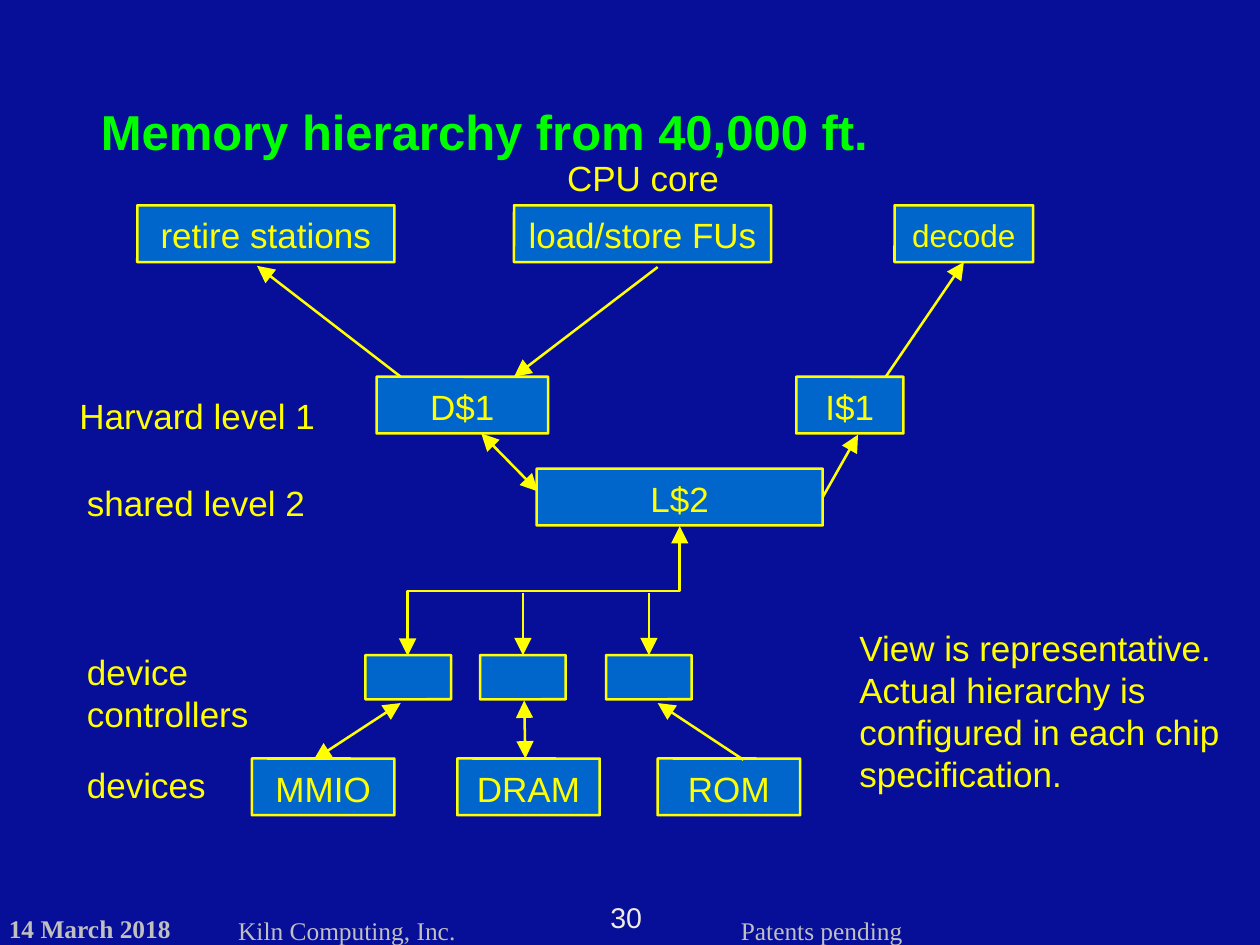
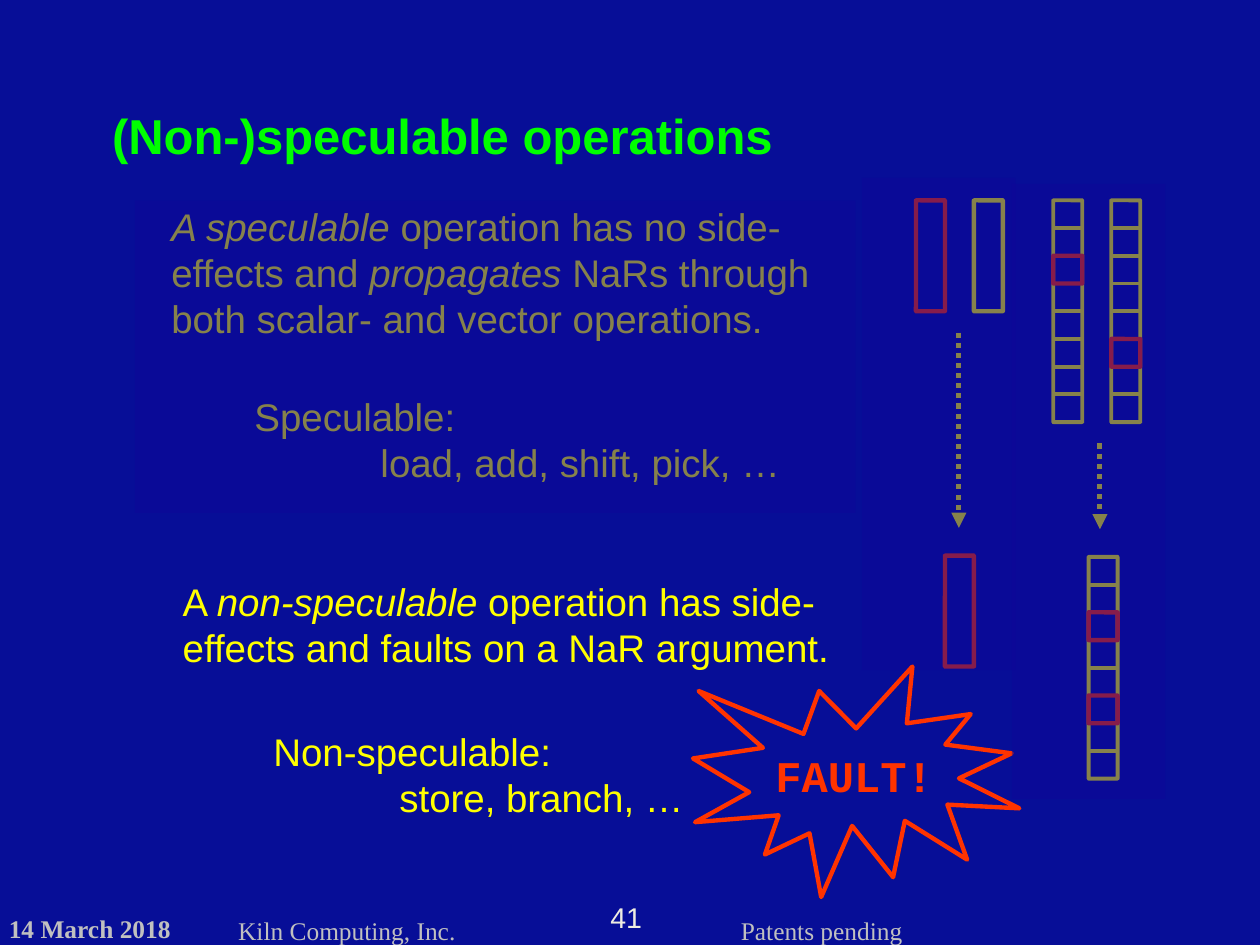
from lxml.etree import SubElement
from pptx import Presentation
from pptx.dml.color import RGBColor
from pptx.enum.dml import MSO_LINE
from pptx.enum.shapes import MSO_CONNECTOR as CXN, MSO_SHAPE as SHAPE
from pptx.enum.text import MSO_ANCHOR as ANCHOR, PP_ALIGN as ALIGN
from pptx.oxml.ns import qn
from pptx.util import Inches, Pt

rgb = RGBColor.from_string
NAVY, BLUE, VEIL = "070E97", "0066CC", "0E0797"
YELLOW, GREEN, RED = "FFFF00", "00FF00", "FF3300"
SILVER, IVORY = "C0C0C0", "EEECE1"

TIGHT = (0.01, 0.03, 0.01, 0.01)
ROOMY = (0.09, 0.04, 0.09, 0.04)
TITLE = dict(size=28, color=GREEN, bold=True)
FOOTER = dict(size=14.5, font="Times New Roman", color=SILVER, ins=(0, 0, 0, 0), wrap=False)


def put(slide, at, text="", shape=None, fill=None, line=None, width=1.45, size=20,
        font="Arial", color=YELLOW, bold=False, ins=TIGHT, wrap=True, middle=False, center=False):
    """Add a text box, or a preset shape if one is given; *stars* mark italics."""
    box = [Inches(v) for v in at]
    if shape is None:
        sp = slide.shapes.add_textbox(*box)
    else:
        sp = slide.shapes.add_shape(shape, *box)
        sp.shadow.inherit = False
        if shape == SHAPE.ROUNDED_RECTANGLE:
            sp.adjustments[0] = 0.005
        if fill:
            sp.fill.solid()
            sp.fill.fore_color.rgb = rgb(fill)
        else:
            sp.fill.background()
        if line:
            sp.line.color.rgb = rgb(line)
            sp.line.width = Pt(width)
        else:
            sp.line.fill.background()
    if not text:
        return sp

    tf = sp.text_frame
    tf.word_wrap = wrap
    tf.margin_left, tf.margin_top, tf.margin_right, tf.margin_bottom = [Inches(v) for v in ins]
    tf.vertical_anchor = ANCHOR.MIDDLE if middle else ANCHOR.TOP
    for i, content in enumerate(text.split("\n")):
        p = tf.add_paragraph() if i else tf.paragraphs[0]
        p.alignment = ALIGN.CENTER if center else ALIGN.LEFT
        if "\t" in content:
            tabs = SubElement(p._p.get_or_add_pPr(), qn("a:tabLst"))
            SubElement(tabs, qn("a:tab"), pos=str(Inches(1)), algn="l")
        for j, part in enumerate(content.split("*")):
            if part:
                r = p.add_run()
                r.text = part
                r.font.name, r.font.size = font, Pt(size)
                r.font.bold, r.font.italic = bold, j % 2 == 1
                r.font.color.rgb = rgb(color)
    return sp


def connect(slide, start, end, arrows="", width=1.45, dash=None, kind=CXN.STRAIGHT, head="lg"):
    """Join two ends, each an (x, y) point or a (shape, side) pair."""
    points = [(0, 0) if hasattr(e[0], "shape_id") else e for e in (start, end)]
    c = slide.shapes.add_connector(kind, *[Inches(v) for point in points for v in point])
    if hasattr(start[0], "shape_id"):
        c.begin_connect(*start)
    if hasattr(end[0], "shape_id"):
        c.end_connect(*end)
    c.line.color.rgb = rgb(YELLOW)
    c.line.width = Pt(width)
    if dash:
        c.line.dash_style = dash
    ln = c.line._get_or_add_ln()
    for mark, tag in (("<", "a:headEnd"), (">", "a:tailEnd")):
        if mark in arrows:
            SubElement(ln, qn(tag), type="triangle", w=head, len=head)
    SubElement(c._element.spPr, qn("a:effectLst"))
    return c


prs = Presentation()
prs.slide_width, prs.slide_height = Inches(10), Inches(7.5)
background = prs.slide_master.background.fill
background.solid()
background.fore_color.rgb = rgb(NAVY)

slides = []
for number in ("30", "41"):
    s = prs.slides.add_slide(prs.slide_layouts[6])
    put(s, (0.07, 7.25, 1.5, 0.23), "14 March 2018", **FOOTER, bold=True)
    put(s, (4.83, 7.14, 0.28, 0.26), number, size=16.3, color=IVORY,
        ins=(0, 0, 0, 0), wrap=False, center=True)
    put(s, (1.89, 7.26, 1.9, 0.23), "Kiln Computing, Inc.", **FOOTER)
    put(s, (5.88, 7.26, 1.5, 0.23), "Patents pending", **FOOTER)
    slides.append(s)
memory, speculation = slides

# Memory hierarchy
s = memory
put(s, (0.8, 0.8, 7.71, 0.45), "Memory hierarchy from 40,000 ft.", **TITLE,
    ins=(0, 0.03, 0, 0), middle=True)

blocks = {}
for name, x, y, w, size in [
    ("retire stations", 1.09, 1.63, 2.04, 20),
    ("load/store FUs", 4.08, 1.63, 2.04, 20),
    ("decode", 7.1, 1.63, 1.1, 18),
    ("D$1", 2.99, 2.99, 1.36, 20),
    ("I$1", 6.32, 2.99, 0.85, 20),
    ("L$2", 4.26, 3.72, 2.27, 20),
    ("MMIO", 2, 6.02, 1.13, 20),
    ("DRAM", 3.63, 6.02, 1.13, 20),
    ("ROM", 5.22, 6.02, 1.13, 20),
]:
    blocks[name] = put(s, (x, y, w, 0.45), name, SHAPE.ROUNDED_RECTANGLE, BLUE, YELLOW,
                       size=size, middle=True, center=True)
controllers = [put(s, (x, 5.2, 0.68, 0.35), "", SHAPE.ROUNDED_RECTANGLE, BLUE, YELLOW)
               for x in (2.9, 3.81, 4.81)]

for label, x, y, w in [
    ("CPU core", 4.49, 1.21, 1.35),
    ("Harvard level 1", 0.62, 3.1, 2.05),
    ("shared level 2", 0.68, 3.79, 1.9),
    ("devices", 0.68, 6.03, 1.1),
]:
    put(s, (x, y, w, 0.31), label, wrap=False)
put(s, (0.68, 5.13, 1.6, 0.59), "device controllers")
put(s, (6.81, 4.94, 2.95, 1.17), "View is representative. Actual hierarchy is "
    "configured in each chip specification.")

for start, end, arrows in [
    ((3.18, 2.99), (2.04, 2.11), ">"),
    ((5.22, 2.12), (4.08, 2.99), ">"),
    ((7.03, 2.99), (blocks["decode"], 2), ">"),
    ((3.82, 3.44), (4.27, 3.9), "<>"),
    ((blocks["L$2"], 3), (6.81, 3.45), ">"),
    ((controllers[1], 0), (4.15, 4.71), "<"),
    ((controllers[2], 0), (5.15, 4.71), "<"),
    ((3.18, 5.58), (2.49, 6.03), "<>"),
    ((4.16, 5.56), (4.17, 6.02), "<>"),
    ((5.9, 6.03), (5.22, 5.58), ">"),
]:
    connect(s, start, end, arrows)

# The bus leaves the cache downwards, so its elbow is turned a quarter
bus = connect(s, (blocks["L$2"], 2), (controllers[0], 0), "<>", kind=CXN.ELBOW)
bus.left, bus.top, bus.width, bus.height = [Inches(v) for v in (3.8, 3.61, 1.03, 2.16)]
xfrm = bus._element.spPr.xfrm
xfrm.flipH, xfrm.rot = False, 90

# Speculable and non-speculable operations
s = speculation
for x, y, color in [(7.27, 1.59, RED), (7.73, 1.59, YELLOW), (7.5, 4.41, RED)]:
    put(s, (x, y, 0.23, 0.88), "", SHAPE.ROUNDED_RECTANGLE, line=color, width=2.5)
for x, top, bottom in [(7.61, 2.64, 4.19), (8.73, 3.52, 4.2)]:
    connect(s, (x, top), (x, bottom), ">", 2.89, MSO_LINE.ROUND_DOT, head="med")

CELL_W, CELL_H, CELLS = 0.23, 0.22, 8
for x, y, nar_cells in [(8.82, 1.59, [5]), (8.36, 1.59, [2]), (8.64, 4.42, [2, 5])]:
    put(s, (x, y, CELL_W, CELLS * CELL_H), "", SHAPE.ROUNDED_RECTANGLE, line=YELLOW, width=2.25)
    for i in range(1, CELLS):
        connect(s, (x, y + i * CELL_H), (x + CELL_W, y + i * CELL_H), width=2.25)
    for i in nar_cells:
        put(s, (x, y + i * CELL_H, CELL_W, CELL_H), "", SHAPE.ROUNDED_RECTANGLE,
            line=RED, width=2.5)

put(s, (1.36, 1.59, 5.43, 1.05), "*A speculable* operation has no side-effects and "
    "*propagates *NaRs through both scalar- and vector operations.",
    size=22, ins=(0, 0.02, 0, 0))
put(s, (1.93, 3.08, 4.4, 0.83), "Speculable:\n\tload, add, shift, pick, …",
    size=22, ins=ROOMY, wrap=False)
put(s, (1.36, 4.55, 5.69, 0.83), "A *non-speculable* operation has side-effects and "
    "faults on a NaR argument.", size=22, ins=ROOMY)
put(s, (2.08, 5.74, 3.6, 0.83), "Non-speculable:\n\tstore, branch, …",
    size=22, ins=ROOMY, wrap=False)

veils = [put(s, (6.84, 1.41, 1.22, 3.91), "", SHAPE.RECTANGLE, VEIL)]
put(s, (5.5, 5.29, 2.59, 1.83), "FAULT!", SHAPE.EXPLOSION1, line=RED, width=2.5, size=25,
    font="Courier New", color=RED, bold=True, ins=ROOMY, middle=True, center=True)
for at in [(1.07, 1.59, 5.72, 2.48), (8.03, 1.46, 1.22, 4.88)]:
    veils.append(put(s, at, "", SHAPE.RECTANGLE, VEIL))
for veil in veils:
    tint = veil._element.spPr.find(qn("a:solidFill")).find(qn("a:srgbClr"))
    SubElement(tint, qn("a:alpha"), val="50000")

put(s, (0.8, 0.8, 5.67, 0.56), "(Non-)speculable operations", **TITLE, ins=ROOMY, wrap=False)

prs.save("out.pptx")
